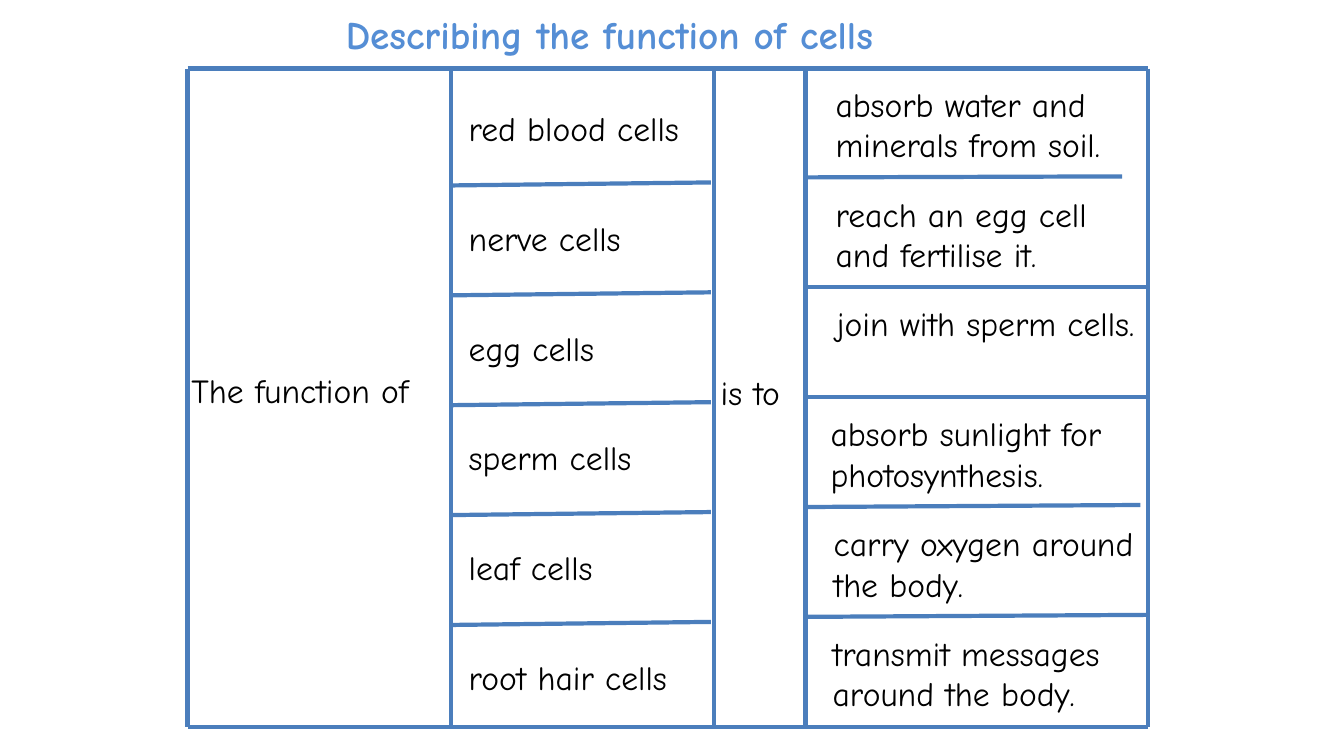
from dataclasses import dataclass

import pptx
import pptx.dml.color
import pptx.enum.shapes
import pptx.enum.text
import pptx.oxml
import pptx.util
from pptx.util import Inches

RULE_BLUE = pptx.dml.color.RGBColor(0x4B, 0x7E, 0xBC)
TITLE_BLUE = pptx.dml.color.RGBColor(0x55, 0x8E, 0xD5)
BLACK = pptx.dml.color.RGBColor(0, 0, 0)
FONT = "Comic Neue"

ROW_PITCH = 1.09
LEFT, RIGHT, TOP, BOTTOM = 1.86, 11.39, 0.68, 7.21
CELL_COLUMN, IS_TO_COLUMN, FUNCTION_COLUMN = 4.47, 7.08, 7.99


@dataclass
class Rule:
    x1: float
    y1: float
    x2: float
    y2: float


@dataclass
class Label:
    text: str
    left: float
    top: float
    width: float
    height: float = 0.5


@dataclass
class FunctionRow:
    text: str
    left: float
    width: float
    rule_end: float = RIGHT
    rule_rise: float = 0


CELLS = ["red blood cells", "nerve cells", "egg cells",
         "sperm cells", "leaf cells", "root hair cells"]

FUNCTIONS = [
    FunctionRow("absorb water and minerals from soil.", 8.19, 3.07, 11.13, 0.01),
    FunctionRow("reach an egg cell and fertilise it.", 8.19, 3.1),
    FunctionRow("join with sperm cells.", 8.2, 3.19),
    FunctionRow("absorb sunlight for photosynthesis.", 8.14, 3.86, 11.31, 0.02),
    FunctionRow("carry oxygen around the body.", 8.17, 3.36, 11.37, 0.02),
    FunctionRow("transmit messages around the body.", 8.16, 3.51),
]


def add_rule(s: pptx.slide.Slide, rule: Rule) -> None:
    line = s.shapes.add_connector(
        pptx.enum.shapes.MSO_CONNECTOR.STRAIGHT,
        Inches(rule.x1), Inches(rule.y1), Inches(rule.x2), Inches(rule.y2))
    line.line.color.rgb = RULE_BLUE
    line.line.width = pptx.util.Pt(3)
    line._element.spPr.append(pptx.oxml.parse_xml(
        '<a:effectLst xmlns:a="http://schemas.openxmlformats.org/drawingml/2006/main"/>'))


def fill_text(sp: pptx.shapes.base.BaseShape, label: Label, size: float,
              color: pptx.dml.color.RGBColor, bold: bool = False) -> None:
    sp.left, sp.top = Inches(label.left), Inches(label.top)
    sp.width, sp.height = Inches(label.width), Inches(label.height)
    tf = sp.text_frame
    tf.text = label.text
    tf.word_wrap = True
    tf.auto_size = pptx.enum.text.MSO_AUTO_SIZE.SHAPE_TO_FIT_TEXT
    tf.vertical_anchor = pptx.enum.text.MSO_ANCHOR.TOP
    p = tf.paragraphs[0]
    p.alignment = pptx.enum.text.PP_ALIGN.LEFT
    font = p.runs[0].font
    font.name, font.size, font.bold = FONT, pptx.util.Pt(size), bold
    font.color.rgb = color


def add_label(s: pptx.slide.Slide, label: Label) -> None:
    sp = s.shapes.add_textbox(0, 0, 0, 0)
    fill_text(sp, label, 24, BLACK)


def main() -> None:
    prs = pptx.Presentation()
    prs.slide_width, prs.slide_height = Inches(13.33), Inches(7.5)
    s = prs.slides.add_slide(prs.slide_layouts[5])

    # Title
    fill_text(s.shapes.title,
              Label("Describing the function of cells", 3.33, 0.05, 7.79, 0.57),
              28, TITLE_BLUE, bold=True)

    # Frame and column rules
    for x in (LEFT, CELL_COLUMN, IS_TO_COLUMN, FUNCTION_COLUMN, RIGHT):
        add_rule(s, Rule(x, TOP, x, BOTTOM))
    for y in (TOP, BOTTOM):
        add_rule(s, Rule(LEFT, y, RIGHT, y))

    # Sentence parts shared by all rows
    add_label(s, Label("The function of", 1.8, 3.62, 2.71))
    add_label(s, Label("is to", 7.05, 3.64, 0.96))

    # Cells and their functions, with a rule under every row but the last
    for i, (cell, function) in enumerate(zip(CELLS, FUNCTIONS)):
        offset = i * ROW_PITCH
        add_label(s, Label(cell, 4.55, 1.02 + offset, 2.65))
        add_label(s, Label(function.text, function.left, 0.78 + offset,
                           function.width, 0.91))
        if i < len(CELLS) - 1:
            add_rule(s, Rule(CELL_COLUMN, 1.84 + offset, 7.05, 1.81 + offset))
            y = 1.76 + offset
            add_rule(s, Rule(FUNCTION_COLUMN, y, function.rule_end,
                             y - function.rule_rise))

    prs.save("out.pptx")


if __name__ == "__main__":
    main()
